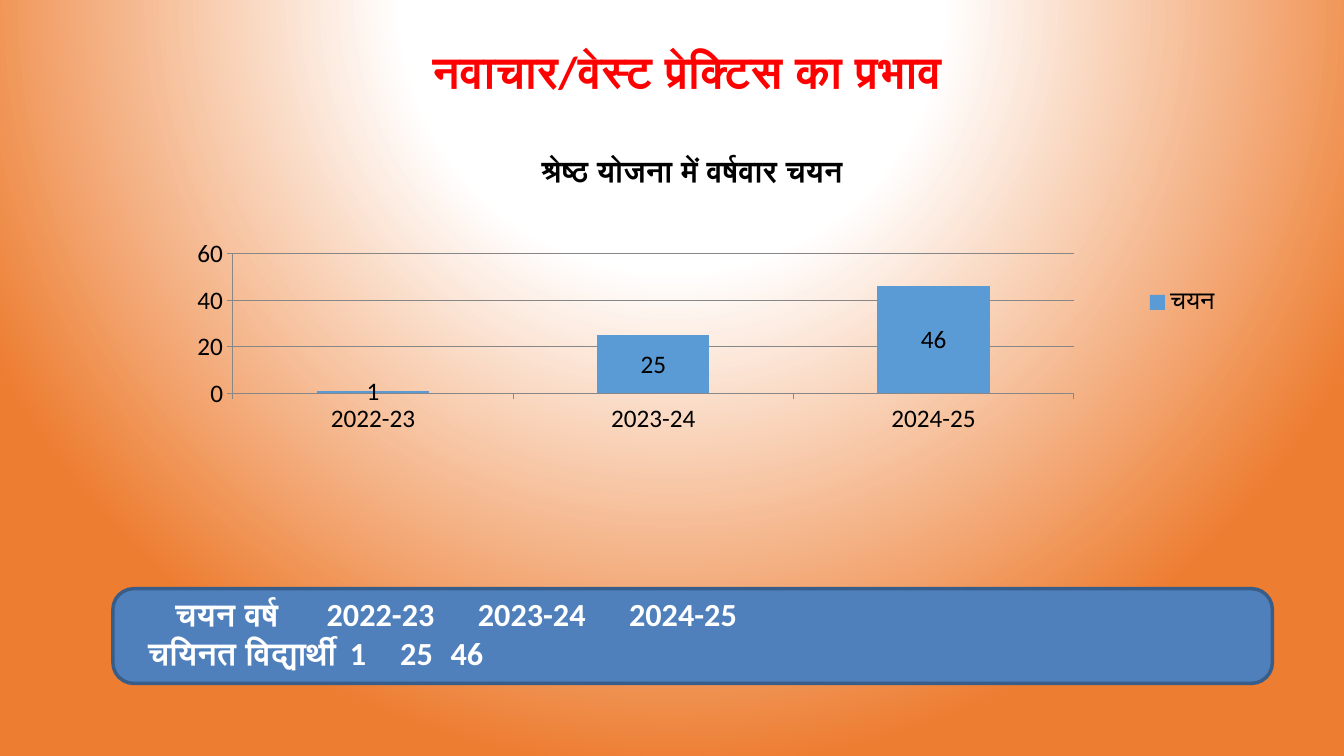
from dataclasses import dataclass

from lxml import etree
from pptx import Presentation
from pptx import util as u
from pptx.chart import data as chart_data
from pptx.dml import color
from pptx.enum import chart as charts, shapes, text
from pptx.oxml import ns

COLOURS = {
    "white": "FFFFFF",
    "orange": "ED7D31",
    "red": "FF0000",
    "black": "000000",
    "bar": "5B9BD5",
    "grid": "878787",
    "panel": "4F80BC",
    "border": "385D89",
}
YEARS = ("2022-23", "2023-24", "2024-25")
SELECTED = (1, 25, 46)
PLOT = {"x": 0.074, "y": 0.353, "w": 0.78, "h": 0.422}


@dataclass(frozen=True)
class SummaryRow:
    label: str
    values: tuple[str, ...]
    indent: float
    stops: tuple[float, ...]


SUMMARY = (
    SummaryRow("चयन वर्ष", YEARS, 0.29, (2.37, 5.02, 8.01)),
    SummaryRow("चयिनत विद्यार्थी", tuple(map(str, SELECTED)), 0.02, (2.86, 5.47, 8.41)),
)


def rgb(name: str) -> color.RGBColor:
    return color.RGBColor.from_string(COLOURS[name])


def style(font, size: float, colour: str, bold: bool = False, face: str = "Calibri") -> None:
    font.name = face
    font.size = u.Pt(size)
    font.bold = bold
    font.color.rgb = rgb(colour)


def add_child(parent, tag: str, **attributes):
    return etree.SubElement(parent, ns.qn(tag), attributes)


def paint_background(slide) -> None:
    slide.background.fill.gradient()
    gradient = next(slide.element.iter(ns.qn("a:gradFill")))
    for child in list(gradient):
        gradient.remove(child)
    stops = add_child(gradient, "a:gsLst")
    for position, name in ((0, "white"), (35000, "white"), (100000, "orange")):
        stop = add_child(stops, "a:gs", pos=str(position))
        add_child(stop, "a:srgbClr", val=COLOURS[name])
    circle = add_child(gradient, "a:path", path="circle")
    add_child(circle, "a:fillToRect", l="50000", t="-80000", r="50000", b="180000")


def add_heading(slide) -> None:
    heading = slide.shapes.title
    heading.left, heading.top = u.Inches(4.06), u.Inches(0.38)
    heading.width, heading.height = u.Inches(6.6), u.Inches(0.64)
    frame = heading.text_frame
    frame.margin_left = u.Inches(0.23)
    frame.margin_top = frame.margin_bottom = 0
    frame.vertical_anchor = text.MSO_ANCHOR.MIDDLE
    paragraph = frame.paragraphs[0]
    paragraph.alignment = text.PP_ALIGN.LEFT
    run = paragraph.add_run()
    run.text = "नवाचार/वेस्ट प्रेक्टिस का प्रभाव"
    style(run.font, 32, "red", True)


def place_plot(chart) -> None:
    plot_area = next(chart.element.iter(ns.qn("c:plotArea")))
    for layout in plot_area.findall(ns.qn("c:layout")):
        plot_area.remove(layout)
    layout = etree.Element(ns.qn("c:layout"))
    plot_area.insert(0, layout)
    manual = add_child(layout, "c:manualLayout")
    add_child(manual, "c:layoutTarget", val="inner")
    for side in ("x", "y"):
        add_child(manual, f"c:{side}Mode", val="edge")
    for measure, share in PLOT.items():
        add_child(manual, f"c:{measure}", val=str(share))


def add_selection_chart(slide) -> None:
    selection = chart_data.CategoryChartData()
    selection.categories = YEARS
    selection.add_series("चयन", SELECTED)
    chart = slide.shapes.add_chart(
        charts.XL_CHART_TYPE.COLUMN_STACKED,
        u.Inches(1.52), u.Inches(1.36), u.Inches(10.69), u.Inches(3.28), selection,
    ).chart
    style(chart.font, 18, "black")

    chart.has_title = True
    caption = chart.chart_title.text_frame.paragraphs[0].add_run()
    caption.text = "श्रेष्ठ योजना में वर्षवार चयन"
    style(caption.font, 21.6, "black", True)

    chart.has_legend = True
    chart.legend.position = charts.XL_LEGEND_POSITION.RIGHT
    chart.legend.include_in_layout = False
    style(chart.legend.font, 18, "black")

    scale = chart.value_axis
    scale.minimum_scale, scale.maximum_scale, scale.major_unit = 0, 60, 20
    scale.has_major_gridlines = True
    for axis in (chart.category_axis, scale):
        axis.major_tick_mark = charts.XL_TICK_MARK.OUTSIDE
        style(axis.tick_labels.font, 18, "black")
    for line in (chart.category_axis.format.line, scale.format.line,
                 scale.major_gridlines.format.line):
        line.color.rgb = rgb("grid")
        line.width = u.Pt(0.75)

    plot = chart.plots[0]
    plot.gap_width, plot.overlap = 150, 100
    plot.vary_by_categories = False
    bars = plot.series[0]
    bars.format.fill.solid()
    bars.format.fill.fore_color.rgb = rgb("bar")
    bars.data_labels.show_value = True
    style(bars.data_labels.font, 18, "black")
    place_plot(chart)


def add_panel(slide) -> None:
    panel = slide.shapes.add_shape(
        shapes.MSO_SHAPE.ROUNDED_RECTANGLE,
        u.Inches(1.12), u.Inches(5.84), u.Inches(11.5), u.Inches(0.94),
    )
    panel.adjustments[0] = 0.22
    panel.shadow.inherit = False
    panel.fill.solid()
    panel.fill.fore_color.rgb = rgb("panel")
    panel.line.color.rgb = rgb("border")
    panel.line.width = u.Pt(2.5)


def write_row(paragraph, row: SummaryRow) -> None:
    properties = paragraph._p.get_or_add_pPr()
    properties.set("marL", str(u.Inches(row.indent)))
    properties.set("indent", "0")
    tabs = add_child(properties, "a:tabLst")
    for stop in row.stops:
        add_child(tabs, "a:tab", pos=str(u.Inches(stop)), algn="l")
    label = paragraph.add_run()
    label.text = row.label
    style(label.font, 23, "white", True, "Roboto")
    for value in row.values:
        entry = paragraph.add_run()
        entry.text = f"\t{value}"
        style(entry.font, 23, "white", True)


def add_summary(slide) -> None:
    frame = slide.shapes.add_textbox(
        u.Inches(1.45), u.Inches(5.89), u.Inches(10.87), u.Inches(0.79)
    ).text_frame
    frame.word_wrap = True
    frame.margin_left = frame.margin_right = frame.margin_bottom = 0
    frame.margin_top = u.Inches(0.01)
    for index, row in enumerate(SUMMARY):
        paragraph = frame.add_paragraph() if index else frame.paragraphs[0]
        write_row(paragraph, row)


def main() -> None:
    deck = Presentation()
    deck.slide_width, deck.slide_height = u.Inches(13.33), u.Inches(7.5)
    slide = deck.slides.add_slide(deck.slide_layouts.get_by_name("Title Only"))
    paint_background(slide)
    add_heading(slide)
    add_selection_chart(slide)
    add_panel(slide)
    add_summary(slide)
    deck.save("out.pptx")


if __name__ == "__main__":
    main()
